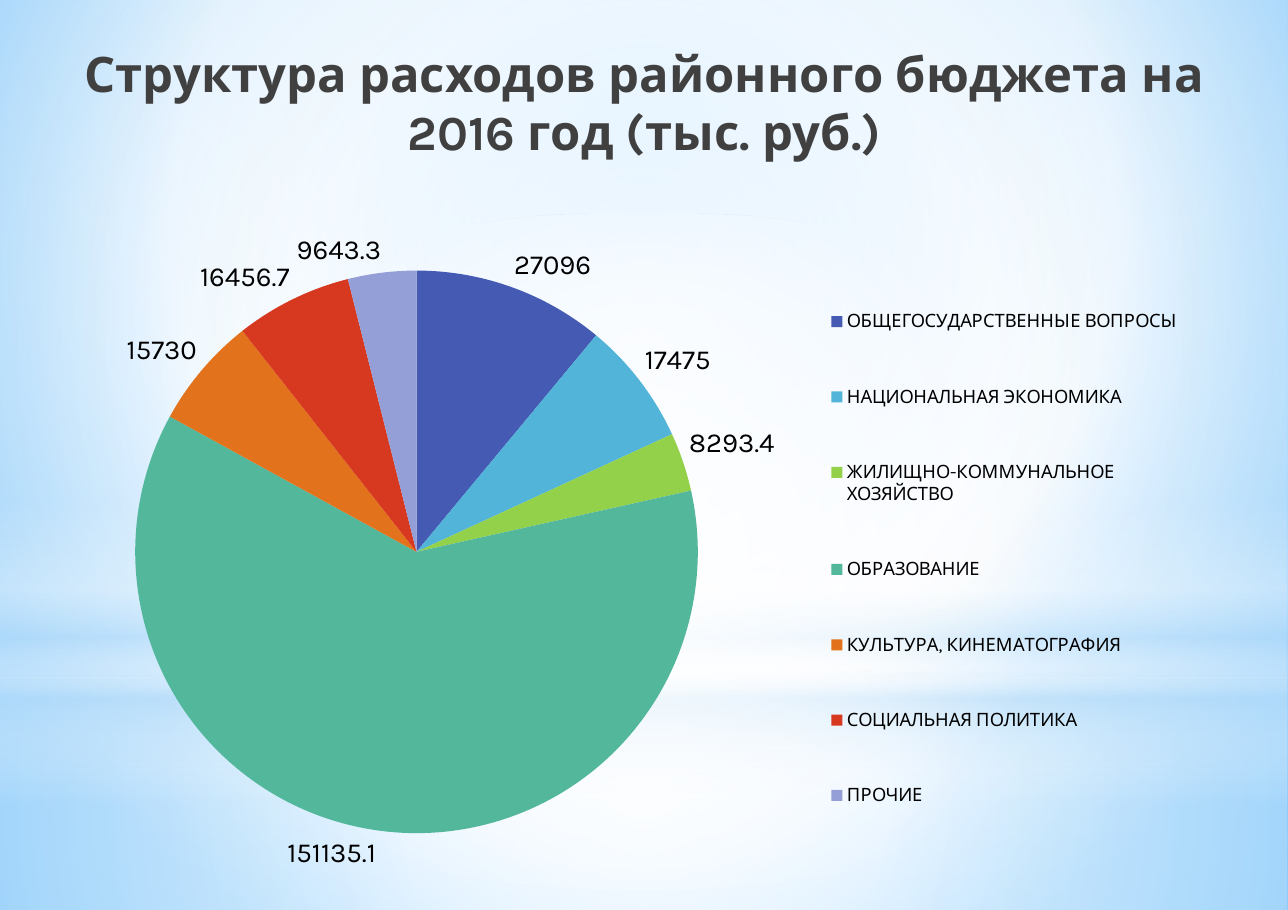
import pptx
import pptx.chart.data
import pptx.dml.color
import pptx.enum.chart
import pptx.enum.shapes
import pptx.enum.text
import pptx.oxml
import pptx.oxml.ns
import pptx.util
from dataclasses import dataclass
from pptx.util import Inches


@dataclass(frozen=True)
class Theme:
    """Colours, font and type sizes of the slide."""
    font: str = "Karla"
    title_color: str = "404040"
    text_color: str = "000000"
    white: str = "FFFFFF"
    haze: str = "B4DCFA"
    sky: str = "9ED5FF"
    deep_sky: str = "5BB9FF"
    title_size: int = 32
    label_size: int = 18
    legend_size: int = 12


THEME = Theme()
CENTER = (50, 50, 50, 50)
EXPENSES = [
    ("ОБЩЕГОСУДАРСТВЕННЫЕ ВОПРОСЫ", 27096, "455AB2"),
    ("НАЦИОНАЛЬНАЯ ЭКОНОМИКА", 17475, "52B4D9"),
    ("ЖИЛИЩНО-КОММУНАЛЬНОЕ ХОЗЯЙСТВО", 8293.4, "94D14A"),
    ("ОБРАЗОВАНИЕ", 151135.1, "53B79C"),
    ("КУЛЬТУРА, КИНЕМАТОГРАФИЯ", 15730, "E2721C"),
    ("СОЦИАЛЬНАЯ ПОЛИТИКА", 16456.7, "D63820"),
    ("ПРОЧИЕ", 9643.3, "949FD8"),
]


def rgb(color):
    """Return a hex string as a colour."""
    return pptx.dml.color.RGBColor.from_string(color)


def set_font(font, size, color, bold=False):
    """Apply the theme font with a size and a colour."""
    font.name = THEME.font
    font.size = pptx.util.Pt(size)
    font.bold = bold
    font.color.rgb = rgb(color)


def set_gradient(fill, properties, stops, focus=None):
    """Fill with (position, colour, opacity) stops, round a focus or downwards."""
    fill.gradient()
    stop_xml = "".join(
        f'<a:gs pos="{position * 1000}"><a:srgbClr val="{color}">'
        f'<a:alpha val="{opacity * 1000}"/></a:srgbClr></a:gs>'
        for position, color, opacity in stops)
    direction = '<a:lin ang="5400000" scaled="0"/>'
    if focus:
        sides = " ".join(f'{side}="{value * 1000}"' for side, value in zip("ltrb", focus))
        direction = f'<a:path path="circle"><a:fillToRect {sides}/></a:path>'
    gradient = pptx.oxml.parse_xml(
        f'<a:gradFill {pptx.oxml.ns.nsdecls("a")} rotWithShape="1">'
        f'<a:gsLst>{stop_xml}</a:gsLst>{direction}</a:gradFill>')
    default = properties.find(pptx.oxml.ns.qn("a:gradFill"))
    properties.replace(default, gradient)


def add_glow(slide, kind, top, height, stops, focus=None):
    """Add a full-width translucent layer of light."""
    glow = slide.shapes.add_shape(kind, 0, Inches(top), Inches(11.69), Inches(height))
    glow.shadow.inherit = False
    glow.line.fill.background()
    set_gradient(glow.fill, glow.element.spPr, stops, focus)


def add_backdrop(slide):
    """Paint the sky background and its layers of light."""
    white, haze = THEME.white, THEME.haze
    rectangle = pptx.enum.shapes.MSO_SHAPE.RECTANGLE
    fill = slide.background.fill
    fill.gradient()
    properties = slide.element.find(".//" + pptx.oxml.ns.qn("p:bgPr"))
    set_gradient(fill, properties,
                 [(0, THEME.sky, 100), (60, white, 100), (100, THEME.deep_sky, 100)],
                 (20, 10, 20, 60))
    add_glow(slide, rectangle, 6.15, 2.11,
             [(0, white, 91), (37, white, 76), (100, haze, 79)], CENTER)
    add_glow(slide, rectangle, 0, 6.15,
             [(0, white, 89), (48, white, 62), (100, haze, 79)], CENTER)
    add_glow(slide, rectangle, 4.54, 2.75,
             [(0, white, 0), (29, white, 30), (45, haze, 40),
              (55, white, 26), (65, haze, 60), (100, white, 0)])
    add_glow(slide, pptx.enum.shapes.MSO_SHAPE.OVAL, 1.93, 6.15,
             [(0, white, 100), (56, white, 0)], CENTER)


def set_title(slide, text):
    """Place and format the slide title."""
    title = slide.shapes.title
    title.left, title.top = Inches(0.35), Inches(0.3)
    title.width, title.height = Inches(11), Inches(1.25)
    frame = title.text_frame
    frame.text = text
    frame.word_wrap = True
    frame.auto_size = pptx.enum.text.MSO_AUTO_SIZE.NONE
    frame.vertical_anchor = pptx.enum.text.MSO_ANCHOR.MIDDLE
    paragraph = frame.paragraphs[0]
    paragraph.alignment = pptx.enum.text.PP_ALIGN.CENTER
    set_font(paragraph.font, THEME.title_size, THEME.title_color, bold=True)


def layout_xml(x, y, width, height, inner=False):
    """Return a manual layout in fractions of the chart area."""
    target = '<c:layoutTarget val="inner"/>' if inner else ""
    return pptx.oxml.parse_xml(
        f'<c:layout {pptx.oxml.ns.nsdecls("c")}><c:manualLayout>{target}'
        f'<c:xMode val="edge"/><c:yMode val="edge"/><c:x val="{x}"/><c:y val="{y}"/>'
        f'<c:w val="{width}"/><c:h val="{height}"/></c:manualLayout></c:layout>')


def set_layout(part, layout):
    """Replace the layout of a plot area or legend."""
    for old in part.findall(pptx.oxml.ns.qn("c:layout")):
        part.remove(old)
    position = part.find(pptx.oxml.ns.qn("c:legendPos"))
    part.insert(0 if position is None else 1, layout)


def add_expense_pie(slide):
    """Add the pie of expenses with outside values and a legend."""
    names, amounts, colors = zip(*EXPENSES)
    data = pptx.chart.data.CategoryChartData()
    data.categories = names
    data.add_series("Series 1", amounts)
    chart = slide.shapes.add_chart(
        pptx.enum.chart.XL_CHART_TYPE.PIE, Inches(0.26), Inches(1.97),
        Inches(10.67), Inches(6.08), data).chart
    chart.has_title = False
    set_font(chart.font, THEME.label_size, THEME.text_color)
    chart.has_legend = True
    legend = chart.legend
    legend.position = pptx.enum.chart.XL_LEGEND_POSITION.RIGHT
    legend.include_in_layout = False
    set_font(legend.font, THEME.legend_size, THEME.text_color)
    plot = chart.plots[0]
    plot.vary_by_categories = True
    plot.has_data_labels = True
    labels = plot.data_labels
    labels.show_value = True
    labels.show_percentage = False
    labels.number_format = "General"
    labels.number_format_is_linked = False
    labels.position = pptx.enum.chart.XL_LABEL_POSITION.OUTSIDE_END
    set_font(labels.font, THEME.label_size, THEME.text_color)
    for index, color in enumerate(colors):
        sector = plot.series[0].points[index].format
        sector.fill.solid()
        sector.fill.fore_color.rgb = rgb(color)
        sector.line.fill.background()
    plot_area = chart.element.find(".//" + pptx.oxml.ns.qn("c:plotArea"))
    legend_area = chart.element.find(".//" + pptx.oxml.ns.qn("c:legend"))
    set_layout(plot_area, layout_xml(0.09, 0.08, 0.48, 0.84, inner=True))
    set_layout(legend_area, layout_xml(0.67, 0.06, 0.32, 0.9))


def main():
    """Build and save the budget slide."""
    deck = pptx.Presentation()
    deck.slide_width, deck.slide_height = Inches(11.69), Inches(8.26)
    slide = deck.slides.add_slide(deck.slide_layouts[5])
    add_backdrop(slide)
    set_title(slide, "Структура расходов районного бюджета на 2016 год (тыс. руб.)")
    add_expense_pie(slide)
    title = slide.shapes.title.element
    title.getparent().insert(6, title)
    deck.save("out.pptx")


if __name__ == "__main__":
    main()
